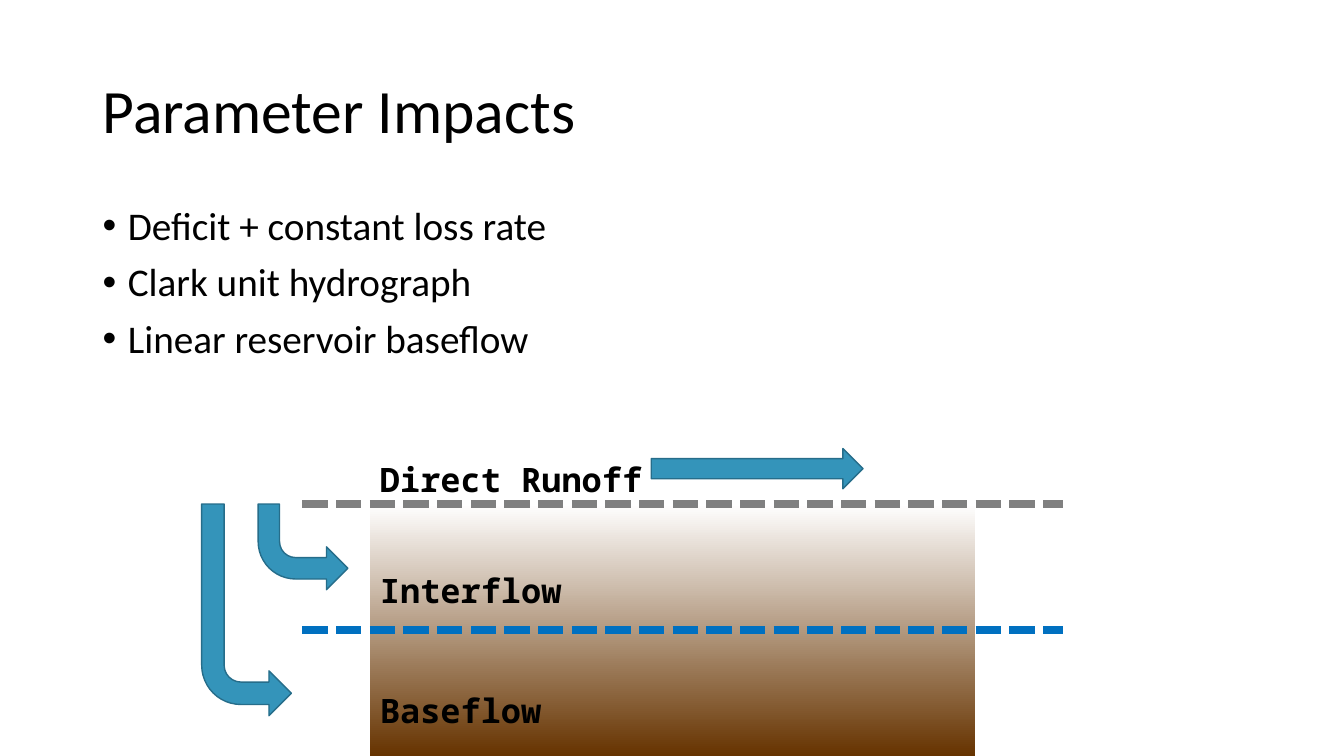
import dataclasses

import lxml.etree
import pptx
import pptx.dml.color
import pptx.enum.dml
import pptx.enum.shapes
import pptx.enum.text
import pptx.oxml.ns
import pptx.util

Inches = pptx.util.Inches
Pt = pptx.util.Pt
SHAPES = pptx.enum.shapes.MSO_SHAPE
ANCHOR = pptx.enum.text.MSO_ANCHOR
qn = pptx.oxml.ns.qn


@dataclasses.dataclass(frozen=True)
class Theme:
    text: str = "000000"
    surface: str = "808080"
    water_table: str = "0070C0"
    arrow: str = "3494BA"
    arrow_edge: str = "266D8A"
    soil_top: str = "FFFFFF"
    soil_bottom: str = "663300"
    font: str = "Calibri"
    label_font: str = "Noto Sans Mono"
    title_size: int = 44
    body_size: int = 28
    label_size: int = 24


THEME = Theme()


def rgb(value):
    return pptx.dml.color.RGBColor.from_string(value)


def add_text(page, box, lines, size, font, bold=False, anchor=ANCHOR.TOP):
    """Place a wrapped text box, one paragraph per line, and return its paragraphs."""
    frame = page.shapes.add_textbox(*map(Inches, box)).text_frame
    frame.word_wrap = True
    frame.vertical_anchor = anchor
    frame.text = "\n".join(lines)
    for para in frame.paragraphs:
        for span in para.runs:
            span.font.size = Pt(size)
            span.font.name = font
            span.font.bold = bold
            span.font.color.rgb = rgb(THEME.text)
    return frame.paragraphs


def add_title(page, box, title):
    paras = add_text(page, box, [title], THEME.title_size, THEME.font,
                     anchor=ANCHOR.MIDDLE)
    paras[0].line_spacing = 0.9


def add_bullets(page, box, items):
    for para in add_text(page, box, items, THEME.body_size, THEME.font):
        para.line_spacing = 0.9
        para.space_before = Pt(10)
        # Hanging bullet
        properties = para._p.get_or_add_pPr()
        properties.set("marL", str(Inches(0.25)))
        properties.set("indent", str(Inches(-0.25)))
        bullet_font = lxml.etree.SubElement(properties, qn("a:buFont"))
        bullet_font.set("typeface", "Arial")
        lxml.etree.SubElement(properties, qn("a:buChar")).set("char", "•")


def add_soil(page, box):
    soil = page.shapes.add_shape(SHAPES.RECTANGLE, *map(Inches, box))
    soil.shadow.inherit = False
    soil.line.fill.background()
    soil.fill.gradient()
    soil.fill.gradient_angle = 270
    colors = (THEME.soil_top, THEME.soil_bottom)
    for stop, position, color in zip(soil.fill.gradient_stops, (0, 1), colors):
        stop.position = position
        stop.color.rgb = rgb(color)


def add_boundary(page, left, right, level, color):
    line = page.shapes.add_connector(
        pptx.enum.shapes.MSO_CONNECTOR.STRAIGHT,
        Inches(left), Inches(level), Inches(right), Inches(level))
    line.line.color.rgb = rgb(color)
    line.line.width = Pt(6)
    line.line.dash_style = pptx.enum.dml.MSO_LINE.SQUARE_DOT
    lxml.etree.SubElement(line._element.spPr, qn("a:effectLst"))


def add_arrow(page, kind, box):
    arrow = page.shapes.add_shape(kind, *map(Inches, box))
    arrow.shadow.inherit = False
    arrow.fill.solid()
    arrow.fill.fore_color.rgb = rgb(THEME.arrow)
    arrow.line.color.rgb = rgb(THEME.arrow_edge)
    arrow.line.width = Pt(1)
    return arrow


def add_descending_arrow(page, box):
    """Bent arrow that drops from the surface and turns right."""
    arrow = add_arrow(page, SHAPES.BENT_ARROW, box)
    arrow.rotation = 180
    arrow._element.spPr.find(qn("a:xfrm")).set("flipH", "1")


def add_flow_diagram(page, box):
    """Soil column with its boundaries, flow labels and arrows."""
    left, top, width, height = box
    boundary_left, boundary_right = left - 0.67, left + 6.87
    water_table = top + height / 2

    def add_label(name, offset):
        add_text(page, (left, top + offset, 4.12, 0.5), [name],
                 THEME.label_size, THEME.label_font, bold=True)

    add_soil(page, box)
    add_label("Direct Runoff", -0.5)
    add_boundary(page, boundary_left, boundary_right, water_table,
                 THEME.water_table)
    add_label("Interflow", 0.6)
    add_label("Baseflow", 1.8)

    # Infiltration to baseflow and to interflow
    for offset, depth in ((-1.67, 2.1), (-1.11, 0.85)):
        add_descending_arrow(page, (left + offset, top, 0.89, depth))

    # Ground surface and runoff along it
    add_boundary(page, boundary_left, boundary_right, top, THEME.surface)
    add_arrow(page, SHAPES.RIGHT_ARROW, (left + 2.79, top - 0.55, 2.1, 0.4))


def main():
    deck = pptx.Presentation()
    deck.slide_width = Inches(13.33)
    deck.slide_height = Inches(7.5)
    page = deck.slides.add_slide(deck.slide_layouts[6])

    add_title(page, (0.92, 0.4, 11.5, 1.45), "Parameter Impacts")
    add_bullets(page, (0.92, 2, 11.5, 1.75), [
        "Deficit + constant loss rate",
        "Clark unit hydrograph",
        "Linear reservoir baseflow",
    ])
    add_flow_diagram(page, (3.67, 5, 6, 2.5))
    deck.save("out.pptx")


if __name__ == "__main__":
    main()
